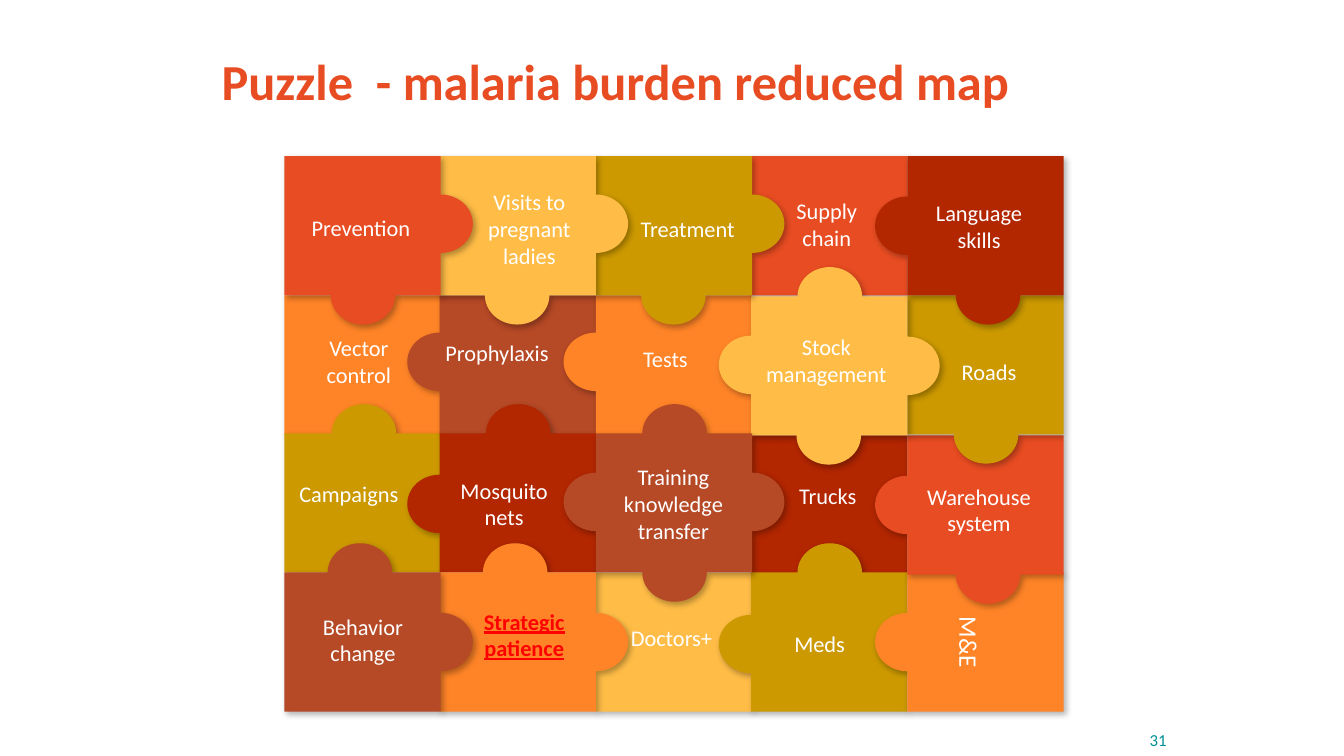
from dataclasses import dataclass
from math import cos, radians, sin

from lxml import etree
from pptx import Presentation
from pptx import util as u
from pptx.dml.color import RGBColor
from pptx.enum import shapes, text
from pptx.oxml import ns

PX = 9144
DEGREE = 60000
LEFT, TOP = 282, 155
COLUMN_STEP, ROW_STEP = 154.4, 137.7
PIECE_WIDTH, PIECE_HEIGHT = 155, 138
TAB_WIDTH, TAB_HEIGHT = 32, 29
LABEL_WIDTH, LINE_HEIGHT = 126, 27


@dataclass(frozen=True)
class Theme:
    font: str = "Calibri"
    title_size: int = 36
    label_size: int = 16
    upright_size: int = 18
    number_size: int = 12
    white: str = "FFFFFF"
    teal: str = "009193"
    alert: str = "FF0000"
    red: str = "E84C22"
    orange: str = "FF8427"
    amber: str = "FFBD47"
    olive: str = "CC9900"
    brown: str = "B64926"
    crimson: str = "B22600"
    shadow: str = "000000"


THEME = Theme()
LABEL_FORMAT = {"size": u.Pt(THEME.label_size)}
ALERT_FORMAT = {**LABEL_FORMAT, "bold": True, "underline": True}

PIECES = [
    (0, 1, 0, THEME.orange, {"top": 79}),
    (0, 2, 0, THEME.olive, {"top": 79}),
    (1, 1, 0, THEME.brown, {"left": 66}),
    (2, 1, 0, THEME.orange, {"left": 66}),
    (2, 3, 0, THEME.amber, {}),
    (3, 2, 2, THEME.crimson, {}),
    (3, 3, 0, THEME.olive, {"top": 78, "left": 71}),
    (4, 3, 0, THEME.orange, {"left": 69}),
    (4, 2, 2, THEME.red, {"bottom": 80, "left": 69}),
    (3, 0, 0, THEME.red, {}),
    (4, 1, 0, THEME.olive, {"bottom": 78}),
    (3, 1, 1, THEME.amber, {"top": 78, "right": 69, "bottom": 77, "left": 68}),
    (4, 0, 0, THEME.crimson, {"bottom": 80, "left": 69}),
    (2, 0, 0, THEME.olive, {"right": 67, "bottom": 77}),
    (1, 0, 0, THEME.amber, {"right": 67, "bottom": 77}),
    (1, 2, 0, THEME.crimson, {"top": 78, "left": 70}),
    (2, 2, 0, THEME.brown, {"top": 78, "right": 68, "bottom": 78, "left": 68}),
    (1, 3, 0, THEME.orange, {"top": 75, "right": 69}),
    (0, 3, 0, THEME.brown, {"top": 75, "right": 69}),
    (0, 0, 0, THEME.red, {"right": 67, "bottom": 78}),
]

LABELS = [
    (430, 332, 1, "Prophylaxis"),
    (462, 182, 3, "Visits to pregnant ladies"),
    (293, 327, 2, "Vector control"),
    (757, 191, 2, "Supply chain"),
    (295, 208, 1, "Prevention"),
    (619, 209, 1, "Treatment"),
    (918, 350, 1, "Roads"),
    (603, 614, 1, "Doctors+"),
    (283, 471, 1, "Campaigns"),
    (597, 337, 1, "Tests"),
    (437, 468, 2, "Mosquito nets"),
    (758, 473, 1, "Trucks"),
    (908, 474, 2, "Warehouse\nsystem"),
    (297, 603, 2, "Behavior change"),
    (605, 455, 3, "Training knowledge transfer"),
    (750, 620, 1, "Meds"),
]


def px(*lengths):
    return [u.Emu(round(length * PX)) for length in lengths]


def set_values(target, values):
    for name, value in values.items():
        setattr(target, name, value)


def write_text(shape, wording, color, font_format, frame_format, paragraph_format):
    frame = shape.text_frame
    set_values(frame, {"word_wrap": True, **frame_format})
    frame.text = wording
    for paragraph in frame.paragraphs:
        set_values(paragraph, paragraph_format)
        for run in paragraph.runs:
            set_values(run.font, {"name": THEME.font, **font_format})
            run.font.color.rgb = RGBColor.from_string(color)


def add_text(slide, box, wording, color, font_format, frame_format, paragraph_format):
    shape = slide.shapes.add_textbox(*px(*box))
    write_text(shape, wording, color, font_format, frame_format, paragraph_format)


def add_label(slide, left, top, lines, wording, width=LABEL_WIDTH,
              color=THEME.white, font_format=LABEL_FORMAT):
    box = (left, top, width, 10 + LINE_HEIGHT * lines)
    add_text(slide, box, wording, color, font_format,
             {"auto_size": text.MSO_AUTO_SIZE.SHAPE_TO_FIT_TEXT},
             {"alignment": text.PP_ALIGN.CENTER})


def add_soft_shadow(shape):
    shape.shadow.inherit = False
    effects = shape._element.spPr.find(ns.qn("a:effectLst"))
    shadow = etree.SubElement(effects, ns.qn("a:outerShdw"), {
        "blurRad": str(u.Pt(4.5)), "dist": str(u.Pt(2.6)),
        "dir": str(53 * DEGREE), "algn": "tl", "rotWithShape": "0"})
    color = etree.SubElement(shadow, ns.qn("a:srgbClr"), val=THEME.shadow)
    etree.SubElement(color, ns.qn("a:alpha"), val="30000")


def outline(left, top, tabs):
    right, bottom = left + PIECE_WIDTH, top + PIECE_HEIGHT
    sides = [
        ("top", (left, top), lambda offset: (left + offset, top), 180),
        ("right", (right, top), lambda offset: (right, top + offset), 270),
        ("bottom", (right, bottom), lambda offset: (left + offset, bottom), 0),
        ("left", (left, bottom), lambda offset: (left, top + offset), 90),
    ]
    points, arcs = [], {}
    for side, corner, centre, start in sides:
        points.append(px(*corner))
        if side in tabs:
            x, y = centre(tabs[side])
            for angle in (start, start + 90, start + 180):
                if angle > start:
                    arcs[len(points)] = (angle - 90) % 360
                points.append(px(x + TAB_WIDTH * cos(radians(angle)),
                                 y + TAB_HEIGHT * sin(radians(angle))))
    return points, arcs


def round_tabs(shape, arcs):
    outline_path = next(shape._element.iter(ns.qn("a:path")))
    segments = list(outline_path)
    width, height = px(TAB_WIDTH, TAB_HEIGHT)
    for index, angle in arcs.items():
        arc = etree.Element(ns.qn("a:arcTo"), {
            "wR": str(width), "hR": str(height),
            "stAng": str(angle * DEGREE), "swAng": str(90 * DEGREE)})
        outline_path.replace(segments[index], arc)


def add_piece(group, column, row, shift, color, tabs):
    left = LEFT + round(COLUMN_STEP * column)
    top = TOP + round(ROW_STEP * row) + shift
    if tabs:
        points, arcs = outline(left, top, tabs)
        builder = group.shapes.build_freeform(*points[0])
        builder.add_line_segments(points[1:], close=True)
        shape = builder.convert_to_shape()
        round_tabs(shape, arcs)
    else:
        shape = group.shapes.add_shape(
            shapes.MSO_SHAPE.RECTANGLE, *px(left, top, PIECE_WIDTH, PIECE_HEIGHT))
    shape.fill.solid()
    shape.fill.fore_color.rgb = RGBColor.from_string(color)
    shape.line.fill.background()
    add_soft_shadow(shape)
    return shape


def add_puzzle(slide):
    group = slide.shapes.add_group_shape()
    pieces = {piece[:2]: add_piece(group, *piece) for piece in PIECES}
    middle = {"vertical_anchor": text.MSO_ANCHOR.MIDDLE}
    centred = {"alignment": text.PP_ALIGN.CENTER}
    margin_left, margin_bottom = px(29, 33)
    write_text(pieces[4, 0], "Language\nskills", THEME.white, LABEL_FORMAT,
               {**middle, "margin_left": margin_left, "margin_bottom": margin_bottom},
               centred)
    upright = pieces[4, 3]
    write_text(upright, "M&E", THEME.white, {"size": u.Pt(THEME.upright_size)},
               middle, centred)
    upright.text_frame._txBody.bodyPr.set("vert", "vert")


def main():
    presentation = Presentation()
    presentation.slide_width, presentation.slide_height = px(1333, 750)
    slide = presentation.slides.add_slide(presentation.slide_layouts[6])
    middle = {"vertical_anchor": text.MSO_ANCHOR.MIDDLE}
    add_text(slide, (210, 21, 900, 125), "Puzzle  - malaria burden reduced map",
             THEME.red, {"size": u.Pt(THEME.title_size), "bold": True},
             middle, {"line_spacing": 0.9})
    add_text(slide, (934, 714, 233, 40), "31", THEME.teal,
             {"size": u.Pt(THEME.number_size)}, middle,
             {"alignment": text.PP_ALIGN.RIGHT})
    add_puzzle(slide)
    for label in LABELS:
        add_label(slide, *label)
    add_label(slide, 749, 326, 3, "Stock management", width=141)
    add_label(slide, 457, 598, 2, "Strategic patience",
              color=THEME.alert, font_format=ALERT_FORMAT)
    presentation.save("out.pptx")


if __name__ == "__main__":
    main()
